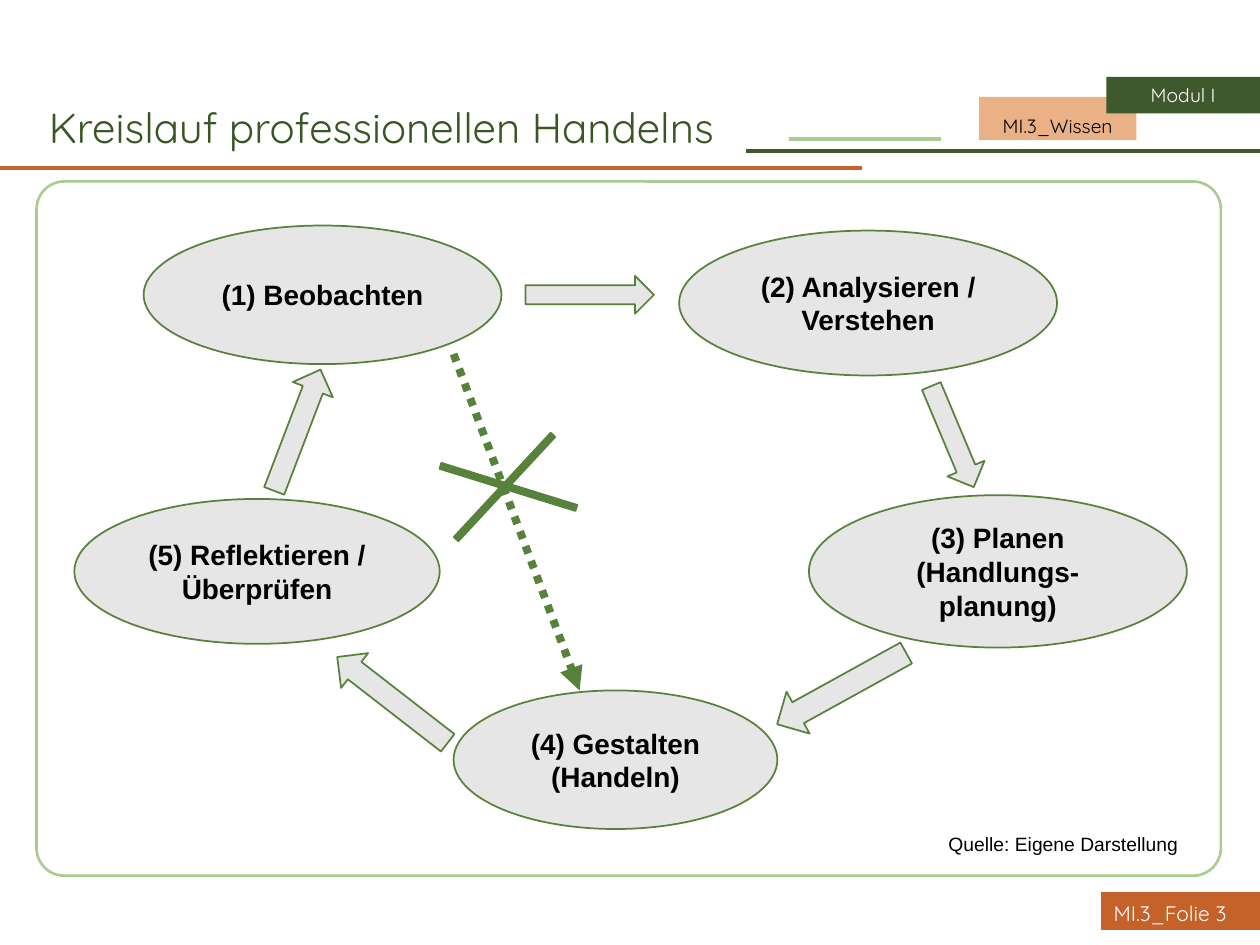
from dataclasses import dataclass

import pptx
import pptx.dml.color
import pptx.enum.dml
import pptx.enum.shapes
import pptx.enum.text
import pptx.oxml.ns
import pptx.util
from lxml import etree

SHAPE = pptx.enum.shapes.MSO_SHAPE
ALIGN = pptx.enum.text.PP_ALIGN
ANCHOR = pptx.enum.text.MSO_ANCHOR

CELL = pptx.util.Inches(0.1)  # the slide is a grid of 100 columns by 75 rows
COLS, ROWS = 100, 75


@dataclass(frozen=True)
class Theme:
    rust: str = "C46229"
    forest: str = "3E5A2D"
    title: str = "385723"
    leaf: str = "57823B"
    mint: str = "A9CD90"
    peach: str = "EAB086"
    grey: str = "E7E6E6"
    black: str = "000000"
    white: str = "FFFFFF"
    head_font: str = "Quicksand"
    body_font: str = "Arial"
    title_pt: float = 24
    step_pt: float = 16
    page_pt: float = 12
    small_pt: float = 11


@dataclass(frozen=True)
class Box:
    col: float
    row: float
    cols: float
    rows: float

    def emu(self) -> list[int]:
        return [cells(v) for v in (self.col, self.row, self.cols, self.rows)]


@dataclass(frozen=True)
class Rule:
    start: float
    end: float
    row: float
    color: str


@dataclass(frozen=True)
class Step:
    text: str
    box: Box


@dataclass(frozen=True)
class Turned:
    box: Box
    angle: float


T = Theme()

RULES = [
    Rule(0, 68.4, 13.3, T.rust),
    Rule(59.2, COLS, 12, T.forest),
    Rule(62.6, 74.7, 11, T.mint),
]
STEPS = [
    Step("(1) Beobachten", Box(11.4, 17.9, 28.4, 11)),
    Step("(2) Analysieren / Verstehen", Box(53.9, 18.3, 30, 11.5)),
    Step("(3) Planen (Handlungs-planung)", Box(64.2, 39.3, 30, 12.1)),
    Step("(4) Gestalten (Handeln)", Box(36, 54.8, 25.7, 11)),
    Step("(5) Reflektieren / Überprüfen", Box(5.9, 39.6, 29, 11.5)),
]
ARROWS = [
    Turned(Box(45.3, 18.3, 3, 10.2), 90),
    Turned(Box(74, 30.3, 3.2, 8.7), 157.2),
    Turned(Box(64.9, 48.8, 3.8, 11.7), 241.1),
    Turned(Box(29.4, 50, 3.5, 11.1), 307.8),
    Turned(Box(21.9, 29, 3.4, 10.3), 20.9),
]
CROSS = [
    Turned(Box(34.7, 38.4, 11.3, 0.5), 17.2),
    Turned(Box(34.4, 38.4, 11.3, 0.5), 312.9),
]


def cells(n: float) -> int:
    return round(n * CELL)


def rgb(color: str) -> pptx.dml.color.RGBColor:
    return pptx.dml.color.RGBColor.from_string(color)


def add_shape(s, kind, box: Box, fill: str | None = None, line: str | None = None,
              width: float = 1, angle: float = 0):
    sp = s.shapes.add_shape(kind, *box.emu())
    sp.shadow.inherit = False
    sp.rotation = angle
    if fill:
        sp.fill.solid()
        sp.fill.fore_color.rgb = rgb(fill)
    else:
        sp.fill.background()
    if line:
        sp.line.color.rgb = rgb(line)
        sp.line.width = pptx.util.Pt(width)
    else:
        sp.line.fill.background()
    return sp


def add_line(s, start: tuple[float, float], end: tuple[float, float],
             color: str, width: float):
    sp = s.shapes.add_connector(pptx.enum.shapes.MSO_CONNECTOR.STRAIGHT,
                                *map(cells, start + end))
    sp.line.color.rgb = rgb(color)
    sp.line.width = pptx.util.Pt(width)
    etree.SubElement(sp._element.spPr, pptx.oxml.ns.qn("a:effectLst"))
    return sp


def write(sp, text: str, size: float, color: str, font: str = T.head_font,
          align=ALIGN.CENTER, anchor=ANCHOR.MIDDLE, bold: bool = False,
          spacing: float = 1) -> None:
    tf = sp.text_frame
    tf.word_wrap = True
    tf.vertical_anchor = anchor
    p = tf.paragraphs[0]
    p.text = text
    p.alignment = align
    p.line_spacing = spacing
    p.font.name = font
    p.font.size = pptx.util.Pt(size)
    p.font.bold = bold
    p.font.color.rgb = rgb(color)


def draw_frame(s) -> None:
    """Draw the rules, border, labels and title around the cycle."""
    for rule in RULES:
        add_line(s, (rule.start, rule.row), (rule.end, rule.row), rule.color, 2.25)
    border = add_shape(s, SHAPE.ROUNDED_RECTANGLE, Box(2.9, 14.4, 94, 55.1),
                       line=T.mint, width=1.5)
    border.adjustments[0] = 0.04

    topic = add_shape(s, SHAPE.RECTANGLE, Box(77.7, 7.7, 12.5, 3.4), T.peach)
    write(topic, "MI.3_Wissen", T.small_pt, T.black, anchor=ANCHOR.TOP, spacing=1.5)
    module = add_shape(s, SHAPE.RECTANGLE, Box(87.8, 6.1, 12.2, 2.9), T.forest)
    write(module, "Modul I", T.small_pt, T.white)
    add_shape(s, SHAPE.RECTANGLE, Box(87.4, 70.8, 12.6, 3), T.rust)
    page = s.shapes.add_textbox(*Box(87.4, 71, 12.6, 3).emu())
    write(page, "MI.3_Folie 3", T.page_pt, T.white, align=ALIGN.LEFT)
    title = s.shapes.add_textbox(*Box(2.9, 8, 86.2, 4.6).emu())
    write(title, "Kreislauf professionellen Handelns", T.title_pt, T.title,
          align=ALIGN.LEFT, spacing=0.9)


def draw_cycle(s) -> None:
    for arrow in ARROWS:
        add_shape(s, SHAPE.UP_ARROW, arrow.box, T.grey, T.leaf, angle=arrow.angle)

    shortcut = add_line(s, (36, 28.1), (46, 54.8), T.leaf, 4.5)
    shortcut.line.dash_style = pptx.enum.dml.MSO_LINE.ROUND_DOT
    etree.SubElement(shortcut.line._get_or_add_ln(),
                     pptx.oxml.ns.qn("a:tailEnd"), type="triangle")
    for bar in CROSS:
        add_shape(s, SHAPE.RECTANGLE, bar.box, T.leaf, T.leaf, angle=bar.angle)

    credit = s.shapes.add_textbox(*Box(73.2, 65.6, 21.3, 2.9).emu())
    write(credit, "Quelle: Eigene Darstellung", T.small_pt, T.black, T.body_font,
          ALIGN.RIGHT, ANCHOR.TOP)
    for step in STEPS:
        sp = add_shape(s, SHAPE.OVAL, step.box, T.grey, T.leaf)
        write(sp, step.text, T.step_pt, T.black, T.body_font, bold=True)


def main() -> None:
    prs = pptx.Presentation()
    prs.slide_width, prs.slide_height = cells(COLS), cells(ROWS)
    s = prs.slides.add_slide(prs.slide_layouts[6])
    draw_frame(s)
    draw_cycle(s)
    prs.save("out.pptx")


if __name__ == "__main__":
    main()
